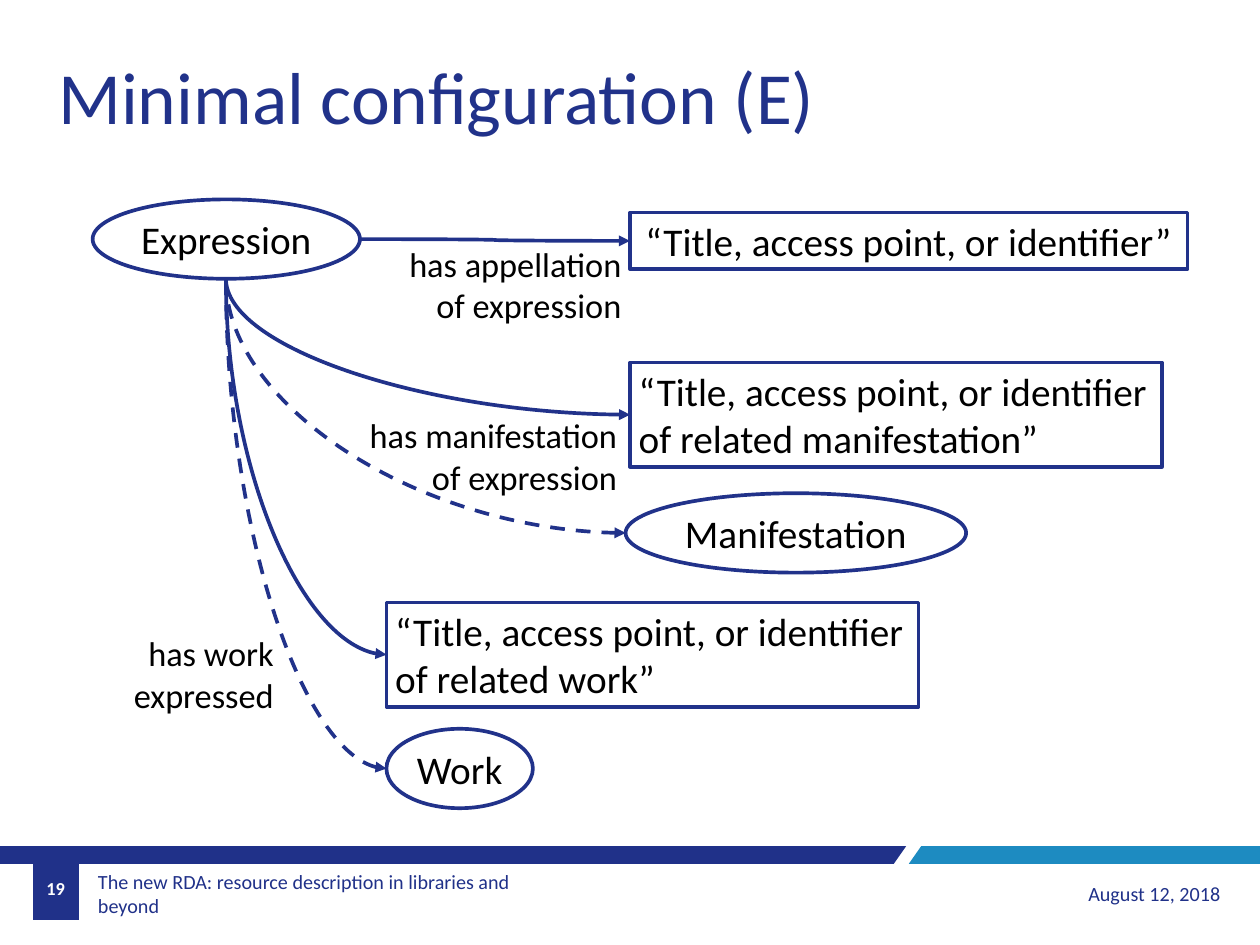
from dataclasses import dataclass

import pptx
import pptx.dml.color
import pptx.enum.dml
import pptx.enum.shapes
import pptx.enum.text
import pptx.oxml
import pptx.oxml.ns
import pptx.util

Inches = pptx.util.Inches
ALIGN = pptx.enum.text.PP_ALIGN
ANCHOR = pptx.enum.text.MSO_ANCHOR
SHAPE = pptx.enum.shapes.MSO_SHAPE
FONT = "Calibri"
INK = "21328A"
NAVY = "203189"
BLUE = "1D8BC1"
BLACK = "000000"
WHITE = "FFFFFF"


@dataclass
class Box:
    x: float
    y: float
    w: float
    h: float
    lines: list[str]
    align: ALIGN
    geometry: SHAPE = SHAPE.RECTANGLE


@dataclass
class Arrow:
    start: tuple[float, float]
    end: tuple[float, float]
    dashed: bool = False
    bent: bool = True


@dataclass
class FooterText:
    x: float
    y: float
    w: float
    text: str
    size: float
    color: str
    align: ALIGN
    margin: float = 0.1
    bold: bool = False


NODES = [
    Box(1.05, 2.26, 3.03, 0.9, ["Expression"], ALIGN.CENTER, SHAPE.OVAL),
    Box(7.09, 5.59, 3.86, 0.9, ["Manifestation"], ALIGN.CENTER, SHAPE.OVAL),
    Box(4.38, 8.26, 1.66, 0.9, ["Work"], ALIGN.CENTER, SHAPE.OVAL),
    Box(7.14, 2.41, 6.32, 0.64, ["“Title, access point, or identifier”"], ALIGN.CENTER),
    Box(7.14, 4.11, 6.03, 1.18,
        ["“Title, access point, or identifier", "of related manifestation”"], ALIGN.LEFT),
    Box(4.38, 6.83, 6.03, 1.18,
        ["“Title, access point, or identifier", "of related work”"], ALIGN.LEFT),
]
LABELS = [
    Box(4.51, 2.71, 2.63, 1.04, ["has appellation", "of expression"], ALIGN.RIGHT),
    Box(4.05, 4.65, 3.04, 1.04, ["has manifestation", "of expression"], ALIGN.RIGHT),
    Box(1.4, 7.12, 1.8, 1.04, ["has work", "expressed"], ALIGN.RIGHT),
]
SOURCE = (2.56, 3.16)
ARROWS = [
    Arrow((4.08, 2.71), (7.14, 2.73), bent=False),
    Arrow(SOURCE, (7.14, 4.7)),
    Arrow(SOURCE, (7.09, 6.04), dashed=True),
    Arrow(SOURCE, (4.38, 7.42)),
    Arrow(SOURCE, (4.38, 8.71), dashed=True),
]
BANDS = [
    (NAVY, [(10.27, 9.59), (0, 9.59), (0, 9.79), (10.13, 9.79)]),
    (BLUE, [(14.28, 9.59), (10.44, 9.59), (10.3, 9.79), (14.28, 9.79)]),
    (NAVY, [(0.37, 10.43), (0.89, 10.43), (0.89, 9.59), (0.37, 9.59)]),
]
FOOTER = [
    FooterText(1.04, 9.85, 5.52, "The new RDA: resource description in libraries and beyond",
               16.4, NAVY, ALIGN.LEFT, margin=0.07),
    FooterText(10.27, 9.85, 3.66, "August 12, 2018", 16.4, NAVY, ALIGN.RIGHT),
    FooterText(0.37, 9.79, 0.52, "19", 14.9, WHITE, ALIGN.CENTER, margin=0, bold=True),
]


def rgb(color: str) -> pptx.dml.color.RGBColor:
    return pptx.dml.color.RGBColor.from_string(color)


def write(tf, lines: list[str], size: float, color: str, align: ALIGN,
          wrap: bool = False, bold: bool = False) -> None:
    tf.auto_size = pptx.enum.text.MSO_AUTO_SIZE.NONE
    tf.word_wrap = wrap
    for i, line in enumerate(lines):
        p = tf.paragraphs[0] if i == 0 else tf.add_paragraph()
        p.alignment = align
        r = p.add_run()
        r.text = line
        r.font.name = FONT
        r.font.size = pptx.util.Pt(size)
        r.font.bold = bold
        r.font.color.rgb = rgb(color)


def add_title(slide) -> None:
    sp = slide.shapes.title
    sp.left, sp.top, sp.width, sp.height = map(Inches, (0.56, 0.52, 8.9, 1.11))
    write(sp.text_frame, ["Minimal configuration (E)"], 60, INK, ALIGN.LEFT)


def add_band(slide, color: str, points: list[tuple[float, float]]) -> None:
    corners = [(Inches(x), Inches(y)) for x, y in points]
    builder = slide.shapes.build_freeform(*corners[0])
    builder.add_line_segments(corners[1:], close=True)
    sp = builder.convert_to_shape()
    sp.shadow.inherit = False
    sp.fill.solid()
    sp.fill.fore_color.rgb = rgb(color)
    sp.line.fill.background()


def add_footer(slide, f: FooterText) -> None:
    sp = slide.shapes.add_textbox(*map(Inches, (f.x, f.y, f.w, 0.55)))
    tf = sp.text_frame
    tf.vertical_anchor = ANCHOR.MIDDLE
    tf.margin_left = tf.margin_right = Inches(f.margin)
    write(tf, [f.text], f.size, f.color, f.align, wrap=True, bold=f.bold)


def add_node(slide, box: Box) -> None:
    sp = slide.shapes.add_shape(box.geometry, *map(Inches, (box.x, box.y, box.w, box.h)))
    sp.shadow.inherit = False
    sp.fill.solid()
    sp.fill.fore_color.rgb = rgb(WHITE)
    sp.line.color.rgb = rgb(INK)
    sp.line.width = pptx.util.Pt(3)
    sp.text_frame.vertical_anchor = ANCHOR.MIDDLE
    write(sp.text_frame, box.lines, 32, BLACK, box.align)


def add_label(slide, box: Box) -> None:
    sp = slide.shapes.add_textbox(*map(Inches, (box.x, box.y, box.w, box.h)))
    write(sp.text_frame, box.lines, 28, BLACK, box.align)


def add_arrow(slide, arrow: Arrow) -> None:
    (x1, y1), (x2, y2) = arrow.start, arrow.end
    cxn = slide.shapes.add_connector(
        pptx.enum.shapes.MSO_CONNECTOR.CURVE, *map(Inches, (x1, y1, x2, y2)))
    cxn.line.color.rgb = rgb(INK)
    cxn.line.width = pptx.util.Pt(3)
    if arrow.dashed:
        cxn.line.dash_style = pptx.enum.dml.MSO_LINE.DASH
    sppr = cxn._element.spPr
    if arrow.bent:
        w, h = y2 - y1, x2 - x1
        cxn.left, cxn.top = Inches((x1 + x2 - w) / 2), Inches((y1 + y2 - h) / 2)
        cxn.width, cxn.height = Inches(w), Inches(h)
        xfrm = sppr.find(pptx.oxml.ns.qn("a:xfrm"))
        xfrm.set("rot", str(270 * 60000))
        xfrm.set("flipH", "1")
        sppr.find(pptx.oxml.ns.qn("a:prstGeom")).set("prst", "curvedConnector2")
    ns = pptx.oxml.ns.nsdecls("a")
    ln = sppr.find(pptx.oxml.ns.qn("a:ln"))
    ln.append(pptx.oxml.parse_xml(f'<a:tailEnd {ns} type="triangle"/>'))
    sppr.append(pptx.oxml.parse_xml(f"<a:effectLst {ns}/>"))


def main() -> None:
    prs = pptx.Presentation()
    prs.slide_width, prs.slide_height = Inches(14.28), Inches(10.71)
    slide = prs.slides.add_slide(prs.slide_layouts[5])
    add_title(slide)
    for color, points in BANDS:
        add_band(slide, color, points)
    for text in FOOTER:
        add_footer(slide, text)
    for node in NODES:
        add_node(slide, node)
    for arrow in ARROWS:
        add_arrow(slide, arrow)
    for label in LABELS:
        add_label(slide, label)
    prs.save("out.pptx")


if __name__ == "__main__":
    main()
